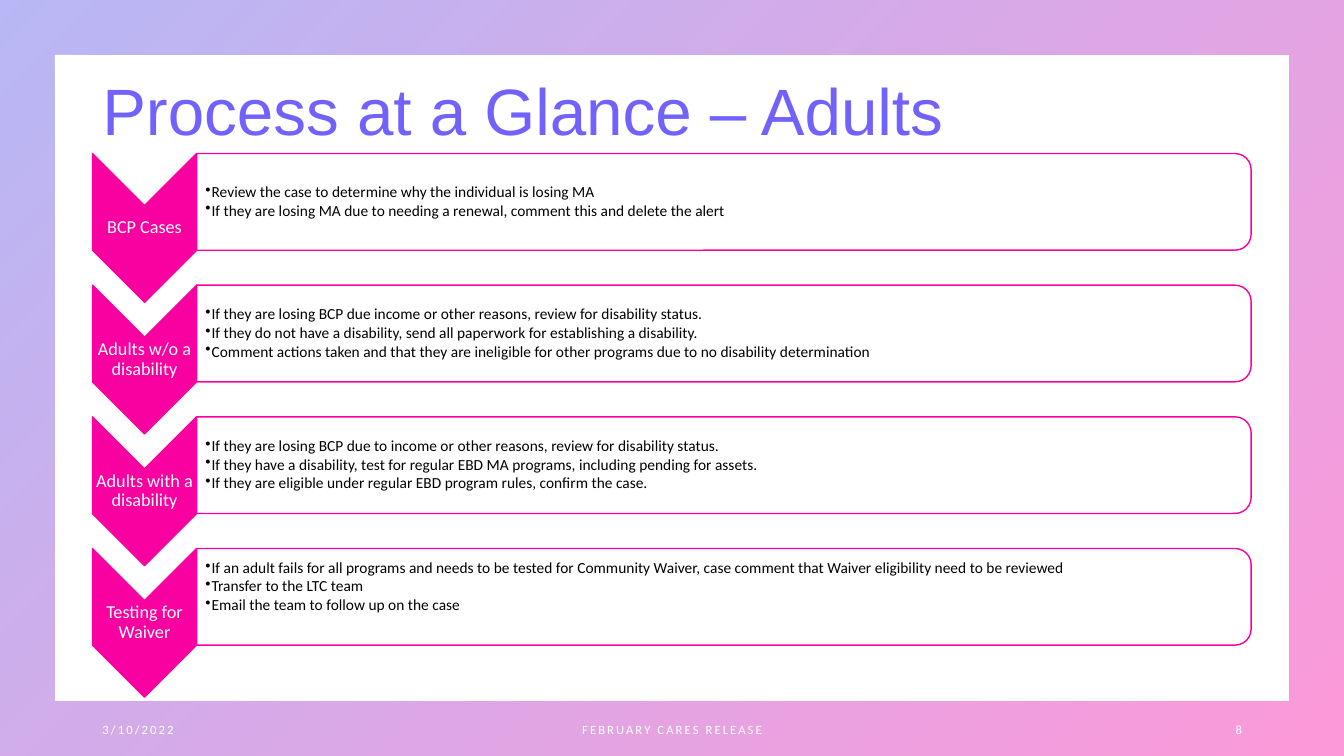
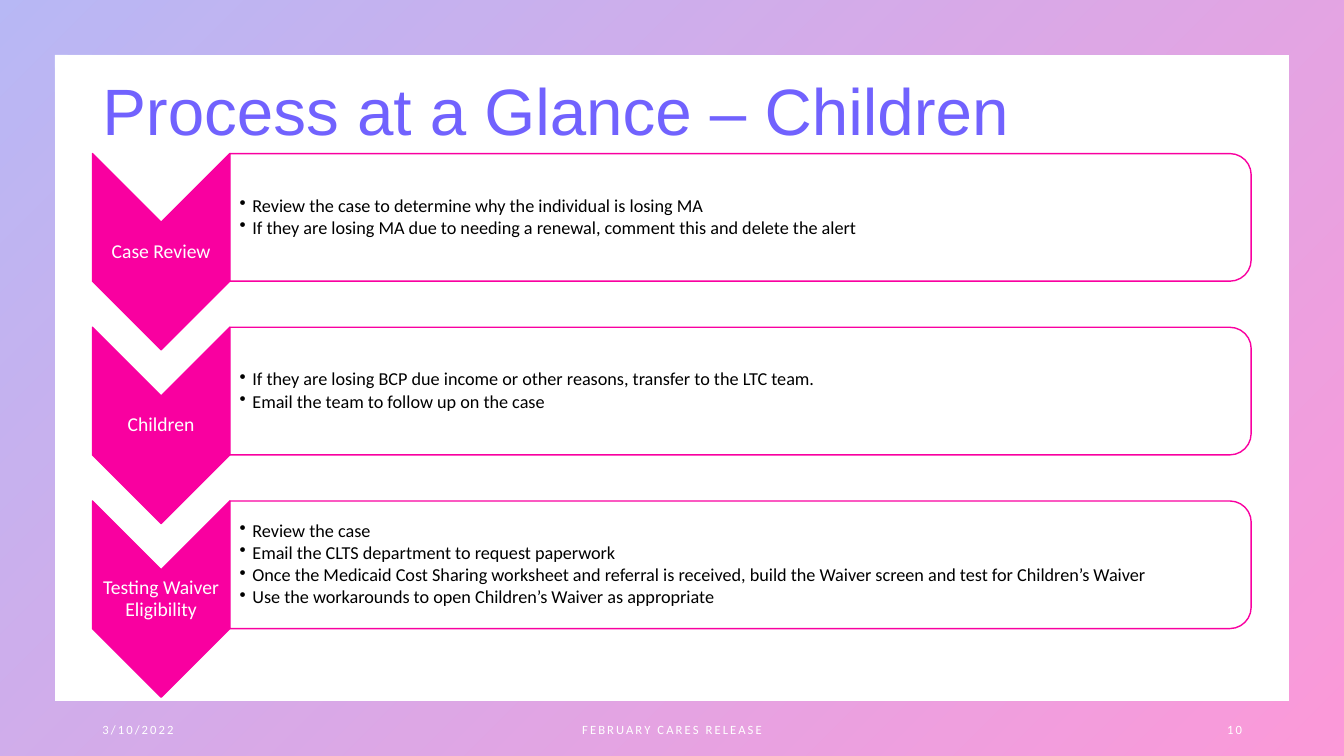
from dataclasses import dataclass

from lxml.etree import SubElement
from pptx import Presentation
from pptx.dml.color import RGBColor
from pptx.enum.shapes import MSO_SHAPE
from pptx.enum.text import MSO_ANCHOR, PP_ALIGN
from pptx.oxml.ns import qn
from pptx.util import Cm, Pt


@dataclass(frozen=True)
class Theme:
    violet: RGBColor = RGBColor(0x4D, 0x4E, 0xE6)
    title_color: RGBColor = RGBColor(0x71, 0x62, 0xFE)
    pink: RGBColor = RGBColor(0xF9, 0x00, 0xA0)
    white: RGBColor = RGBColor(0xFF, 0xFF, 0xFF)
    black: RGBColor = RGBColor(0x00, 0x00, 0x00)
    title_font: str = "Arial"
    body_font: str = "Calibri"
    title_size: float = 46.8
    footer_size: float = 9


@dataclass(frozen=True)
class ListStyle:
    """Type sizes in points and bullet spacing in cm for one process list."""
    label_size: float
    bullet_size: float
    indent: float
    inset: float


THEME = Theme()
WIDTH, HEIGHT = 33.87, 19.05
LEFT, RIGHT = 2.33, 31.53
LIST_TOP, LIST_HEIGHT = 3.87, 13.7
STEP_RATIO = 0.885     # row pitch / chevron height
CHEVRON_RATIO = 0.7    # chevron width / height
BAR_RATIO = 0.65       # bar height / chevron height
DEFAULT_INSETS = (0.25, 0.13, 0.25, 0.13)

ADULT_STYLE = ListStyle(label_size=13, bullet_size=11, indent=0.16, inset=0.22)
CHILD_STYLE = ListStyle(label_size=14, bullet_size=13, indent=0.32, inset=0.25)

# Each row: label, bullets, extra bottom inset in cm
ADULT_ROWS = [
    ("BCP Cases", [
        "Review the case to determine why the individual is losing MA",
        "If they are losing MA due to needing a renewal, comment this and delete the alert",
    ], 0),
    ("Adults w/o a disability", [
        "If they are losing BCP due income or other reasons, review for disability status.",
        "If they do not have a disability, send all paperwork for establishing a disability.",
        "Comment actions taken and that they are ineligible for other programs "
        "due to no disability determination",
    ], 0),
    ("Adults with a disability", [
        "If they are losing BCP due to income or other reasons, review for disability status.",
        "If they have a disability, test for regular EBD MA programs, including pending for assets.",
        "If they are eligible under regular EBD program rules, confirm the case.",
    ], 0),
    ("Testing for Waiver", [
        "If an adult fails for all programs and needs to be tested for Community Waiver, "
        "case comment that Waiver eligibility need to be reviewed",
        "Transfer to the LTC team",
        "Email the team to follow up on the case",
    ], 0.5),
]
CHILD_ROWS = [
    ("Case Review", [
        "Review the case to determine why the individual is losing MA",
        "If they are losing MA due to needing a renewal, comment this and delete the alert",
    ], 0),
    ("Children", [
        "If they are losing BCP due income or other reasons, transfer to the LTC team.",
        "Email the team to follow up on the case",
    ], 0),
    ("Testing Waiver Eligibility", [
        "Review the case",
        "Email the CLTS department to request paperwork",
        "Once the Medicaid Cost Sharing worksheet and referral is received, "
        "build the Waiver screen and test for Children’s Waiver",
        "Use the workarounds to open Children’s Waiver as appropriate",
    ], 0),
]


def add_text(slide, lines, left, top, width, height, *, size, color,
             font=THEME.body_font, align=PP_ALIGN.LEFT, insets=DEFAULT_INSETS,
             line_spacing=0.9, space_after=0, bullet_indent=0, tracking=0):
    """Add a vertically centred text box; lengths in cm, tracking in points."""
    sp = slide.shapes.add_textbox(Cm(left), Cm(top), Cm(width), Cm(height))
    tf = sp.text_frame
    tf.word_wrap = True
    tf.vertical_anchor = MSO_ANCHOR.MIDDLE
    tf.margin_left, tf.margin_top, tf.margin_right, tf.margin_bottom = map(Cm, insets)
    for i, line in enumerate(lines):
        p = tf.add_paragraph() if i else tf.paragraphs[0]
        p.alignment = align
        p.line_spacing = line_spacing
        p.space_after = Pt(space_after)
        if bullet_indent:
            p_pr = p._p.get_or_add_pPr()
            p_pr.set("marL", str(Cm(bullet_indent)))
            p_pr.set("indent", str(-Cm(bullet_indent)))
            SubElement(p_pr, qn("a:buChar")).set("char", "•")
        r = p.add_run()
        r.text = line
        r.font.name = font
        r.font.size = Pt(size)
        r.font.color.rgb = color
        if tracking:
            r._r.get_or_add_rPr().set("spc", str(int(tracking * 100)))


def set_opacity(sp, percent):
    """Apply to every fill colour; call before the line is coloured."""
    for color in sp.element.spPr.iter(qn("a:srgbClr")):
        SubElement(color, qn("a:alpha")).set("val", str(percent * 1000))


def add_turned_shape(slide, kind, left, top, width, height, fill, opacity=100):
    """Add a shape turned 90 degrees; the box given is the one that shows."""
    sp = slide.shapes.add_shape(
        kind, Cm(left + (width - height) / 2), Cm(top + (height - width) / 2),
        Cm(height), Cm(width))
    sp.rotation = 90
    sp.shadow.inherit = False
    sp.fill.solid()
    sp.fill.fore_color.rgb = fill
    if opacity < 100:
        set_opacity(sp, opacity)
    sp.line.color.rgb = THEME.pink
    sp.line.width = Pt(1)


def add_frame(slide):
    sp = slide.shapes.add_shape(MSO_SHAPE.FRAME, 0, 0, Cm(WIDTH), Cm(HEIGHT))
    sp.adjustments[0] = 0.072
    sp.shadow.inherit = False
    sp.line.fill.background()
    sp.fill.gradient()
    sp.fill.gradient_angle = 315
    for stop, position, color in zip(sp.fill.gradient_stops, (0, 1),
                                     (THEME.violet, THEME.pink)):
        stop.position = position
        stop.color.rgb = color
    set_opacity(sp, 40)


def add_footer(slide, number):
    for text, left, width, align in (
            ("3/10/2022", 2.33, 7.62, PP_ALIGN.LEFT),
            ("FEBRUARY CARES RELEASE", 11.22, 11.43, PP_ALIGN.CENTER),
            (str(number), 23.93, 7.62, PP_ALIGN.RIGHT)):
        add_text(slide, [text], left, 17.86, width, 1.02, size=THEME.footer_size,
                 color=THEME.white, align=align, line_spacing=1, tracking=1.5)


def add_process_list(slide, rows, style):
    """Stack chevrons with their bars so that the rows fill the list height."""
    chevron_h = LIST_HEIGHT / (1 + (len(rows) - 1) * STEP_RATIO)
    chevron_w = chevron_h * CHEVRON_RATIO
    bar_h = chevron_h * BAR_RATIO
    bar_left = LEFT + chevron_w
    bar_w = RIGHT - bar_left
    for i, (label, bullets, bottom) in enumerate(rows):
        top = LIST_TOP + i * chevron_h * STEP_RATIO
        add_turned_shape(slide, MSO_SHAPE.CHEVRON, LEFT, top, chevron_w, chevron_h,
                         THEME.pink)
        add_text(slide, [label], LEFT, top + chevron_w / 2, chevron_w,
                 chevron_h - chevron_w, size=style.label_size, color=THEME.white,
                 align=PP_ALIGN.CENTER, insets=(0.02,) * 4)
        add_turned_shape(slide, MSO_SHAPE.ROUND_2_SAME_RECTANGLE, bar_left, top,
                         bar_w, bar_h, THEME.white, opacity=90)
        add_text(slide, bullets, bar_left, top, bar_w, bar_h,
                 size=style.bullet_size, color=THEME.black,
                 insets=(style.inset, 0.02, 0.02, 0.02 + bottom),
                 space_after=0.13 * style.bullet_size, bullet_indent=style.indent)


def add_process_slide(prs, title, number, rows, style):
    slide = prs.slides.add_slide(prs.slide_layouts[6])
    add_frame(slide)
    add_text(slide, [title], LEFT, 1.88, 29.2, 2, size=THEME.title_size,
             color=THEME.title_color, font=THEME.title_font)
    add_process_list(slide, rows, style)
    add_footer(slide, number)


def main():
    prs = Presentation()
    prs.slide_width, prs.slide_height = Cm(WIDTH), Cm(HEIGHT)
    add_process_slide(prs, "Process at a Glance – Adults", 8, ADULT_ROWS, ADULT_STYLE)
    add_process_slide(prs, "Process at a Glance – Children", 10, CHILD_ROWS, CHILD_STYLE)
    prs.save("out.pptx")


if __name__ == "__main__":
    main()
